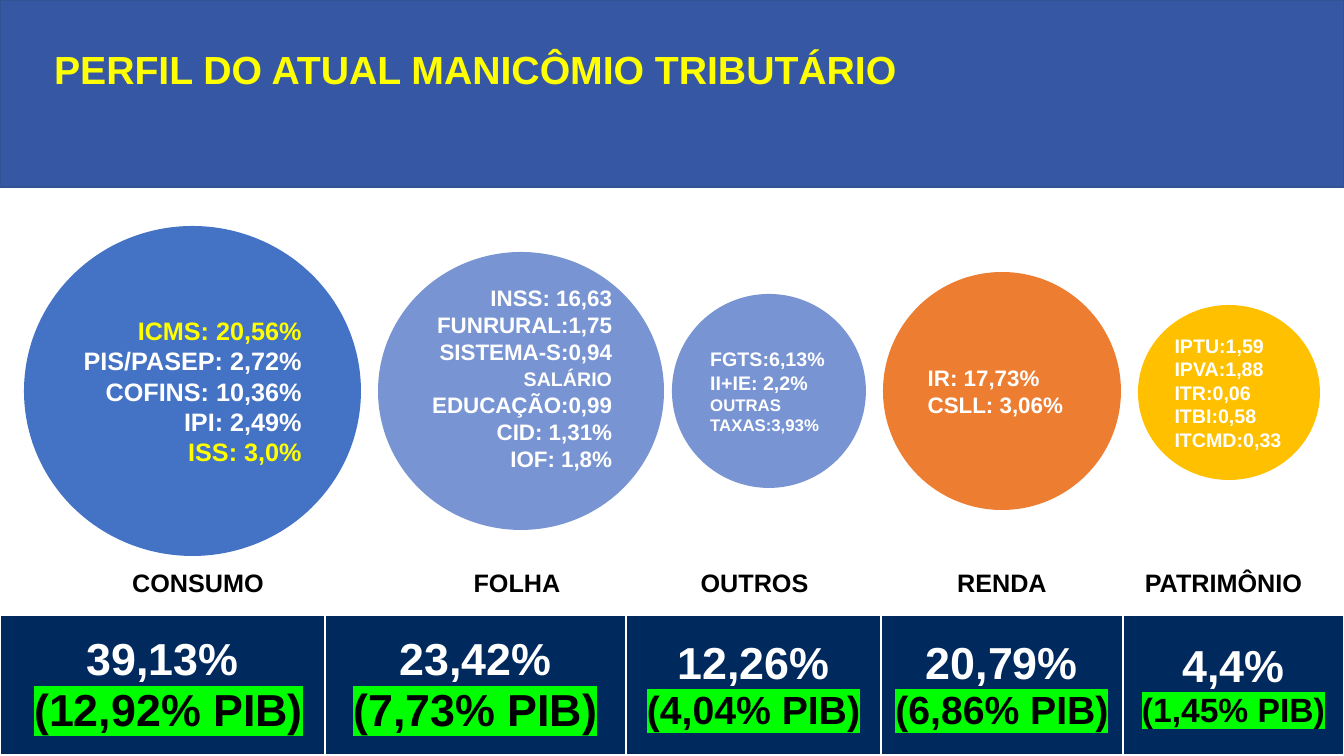
from lxml.etree import SubElement
from pptx import Presentation
from pptx.dml.color import RGBColor
from pptx.enum.shapes import MSO_SHAPE
from pptx.enum.text import MSO_ANCHOR, MSO_AUTO_SIZE, PP_ALIGN
from pptx.oxml import parse_xml
from pptx.oxml.ns import nsdecls, qn
from pptx.util import Pt

PX = 914400 / 100.8
THEME = {
    "font": "Arial",
    "banner": "3657A3", "banner_line": "31538F",
    "blue": "4472C4", "light_blue": "7894D2", "orange": "ED7D31", "gold": "FFC000",
    "navy": "00295E", "white": "FFFFFF", "black": "000000",
    "yellow": "FFFF00", "green": "00FF00",
    "title": 28, "label": 18, "total": 32,
}


def px(*lengths):
    return [round(length * PX) for length in lengths]


def write(frame, paragraphs, align, anchor=MSO_ANCHOR.MIDDLE):
    """Fill a text frame; a run is (text, size, colour) or (text, size, colour, highlight)."""
    layout = {"word_wrap": True, "auto_size": MSO_AUTO_SIZE.NONE, "vertical_anchor": anchor}
    for name, value in layout.items():
        setattr(frame, name, value)
    for index, runs in enumerate(paragraphs):
        paragraph = frame.paragraphs[0] if index == 0 else frame.add_paragraph()
        paragraph.alignment = align
        for text, size, color, *highlight in runs:
            run = paragraph.add_run()
            run.text = text
            for name, value in {"name": THEME["font"], "size": Pt(size), "bold": True}.items():
                setattr(run.font, name, value)
            run.font.color.rgb = RGBColor.from_string(THEME[color])
            if highlight:
                run.font.fill._xPr.find(qn("a:solidFill")).addnext(parse_xml(
                    f'<a:highlight {nsdecls("a")}><a:srgbClr val="{THEME[highlight[0]]}"/></a:highlight>'))


presentation = Presentation()
presentation.slide_width, presentation.slide_height = px(1344, 756)
slide = presentation.slides.add_slide(presentation.slide_layouts[5])
shapes = slide.shapes

# Banner with the title in front of it
banner = shapes.add_shape(MSO_SHAPE.RECTANGLE, *px(0, 0, 1344, 187))
banner.shadow.inherit = False
banner.fill.solid()
banner.fill.fore_color.rgb = RGBColor.from_string(THEME["banner"])
banner.line.color.rgb = RGBColor.from_string(THEME["banner_line"])
banner.line.width = Pt(1)

title = shapes.title
banner._element.addnext(title._element)
for name, value in zip(("left", "top", "width", "height"), px(44, 40, 1000, 58)):
    setattr(title, name, value)
write(title.text_frame, [[("PERFIL DO ATUAL MANICÔMIO TRIBUTÁRIO", THEME["title"], "yellow")]],
      PP_ALIGN.LEFT, MSO_ANCHOR.TOP)

# Circles: box, fill, alignment, bottom inset, lines
circles = [
    ((24, 226, 337, 330), "blue", PP_ALIGN.RIGHT, 5, [
        [("ICMS: 20,56%", 18, "yellow")],
        [("PIS/PASEP: 2,72%", 18, "white")],
        [("COFINS: 10,36%", 18, "white")],
        [("IPI: 2,49%", 18, "white")],
        [("ISS: 3,0%", 18, "yellow")]]),
    ((378, 252, 286, 278), "light_blue", PP_ALIGN.RIGHT, 31, [
        [("INSS: 16,63", 16, "white")],
        [("FUNRURAL:1,75", 16, "white")],
        [("SISTEMA-S:0,94", 16, "white")],
        [("SALÁRIO", 14, "white"), (" EDUCAÇÃO:0,99", 16, "white")],
        [("CID: 1,31%", 16, "white")],
        [("IOF: 1,8%", 16, "white")]]),
    ((672, 294, 194, 194), "light_blue", PP_ALIGN.LEFT, 5, [
        [("FGTS:6,13%", 14, "white")],
        [("II+IE: 2,2%", 14, "white")],
        [("OUTRAS TAXAS:3,93%", 12, "white")]]),
    ((883, 272, 238, 238), "orange", PP_ALIGN.LEFT, 5, [
        [("IR: 17,73%", 16, "white")],
        [("CSLL: 3,06%", 16, "white")]]),
    ((1138, 305, 182, 175), "gold", PP_ALIGN.LEFT, 5, [
        [(text, 14, "white")]
        for text in ("IPTU:1,59", "IPVA:1,88", "ITR:0,06", "ITBI:0,58", "ITCMD:0,33")]),
]
for box, color, align, bottom, lines in circles:
    circle = shapes.add_shape(MSO_SHAPE.OVAL, *px(*box))
    circle.shadow.inherit = False
    circle.fill.solid()
    circle.fill.fore_color.rgb = RGBColor.from_string(THEME[color])
    circle.line.fill.background()
    circle.text_frame.margin_bottom = px(bottom)[0]
    write(circle.text_frame, lines, align)

# Category labels: text, left, width
labels = [("CONSUMO", 42, 312), ("FOLHA", 429, 176), ("OUTROS", 690, 129),
          ("RENDA", 905, 194), ("PATRIMÔNIO", 1115, 217)]
for text, left, width in labels:
    label = shapes.add_textbox(*px(left, 562, width, 40))
    write(label.text_frame, [[(text, THEME["label"], "black")]], PP_ALIGN.CENTER, MSO_ANCHOR.TOP)

# Totals table: column width, share, share of GDP, size of the latter
totals = [
    (325, "39,13%", "(12,92% PIB)", 32),
    (301, "23,42%", "(7,73% PIB)", 32),
    (255, "12,26%", "(4,04% PIB)", 28),
    (242, "20,79%", "(6,86% PIB)", 28),
    (221, "4,4%", "(1,45% PIB)", 24),
]
table = shapes.add_table(1, len(totals), *px(0, 615, 1344, 141)).table
table.first_row = table.horz_banding = False
for column, (width, share, gdp, size) in enumerate(totals):
    table.columns[column].width = px(width)[0]
    cell = table.cell(0, column)
    cell.vertical_anchor = MSO_ANCHOR.MIDDLE
    cell.fill.solid()
    cell.fill.fore_color.rgb = RGBColor.from_string(THEME["navy"])
    gdp_runs = [(gdp, size, "black", "green")]
    if column == 0:
        gdp_runs.insert(0, (" ", size, "black"))
    write(cell.text_frame, [[(share, THEME["total"], "white")], gdp_runs], PP_ALIGN.CENTER)
    properties = cell._tc.get_or_add_tcPr()
    for index, (side, weight) in enumerate({"L": 1, "R": 1, "T": 1, "B": 3}.items()):
        border = parse_xml(f'<a:ln{side} {nsdecls("a")} w="{Pt(weight)}"/>')
        SubElement(SubElement(border, qn("a:solidFill")), qn("a:srgbClr"), val=THEME["white"])
        properties.insert(index, border)

presentation.save("out.pptx")
